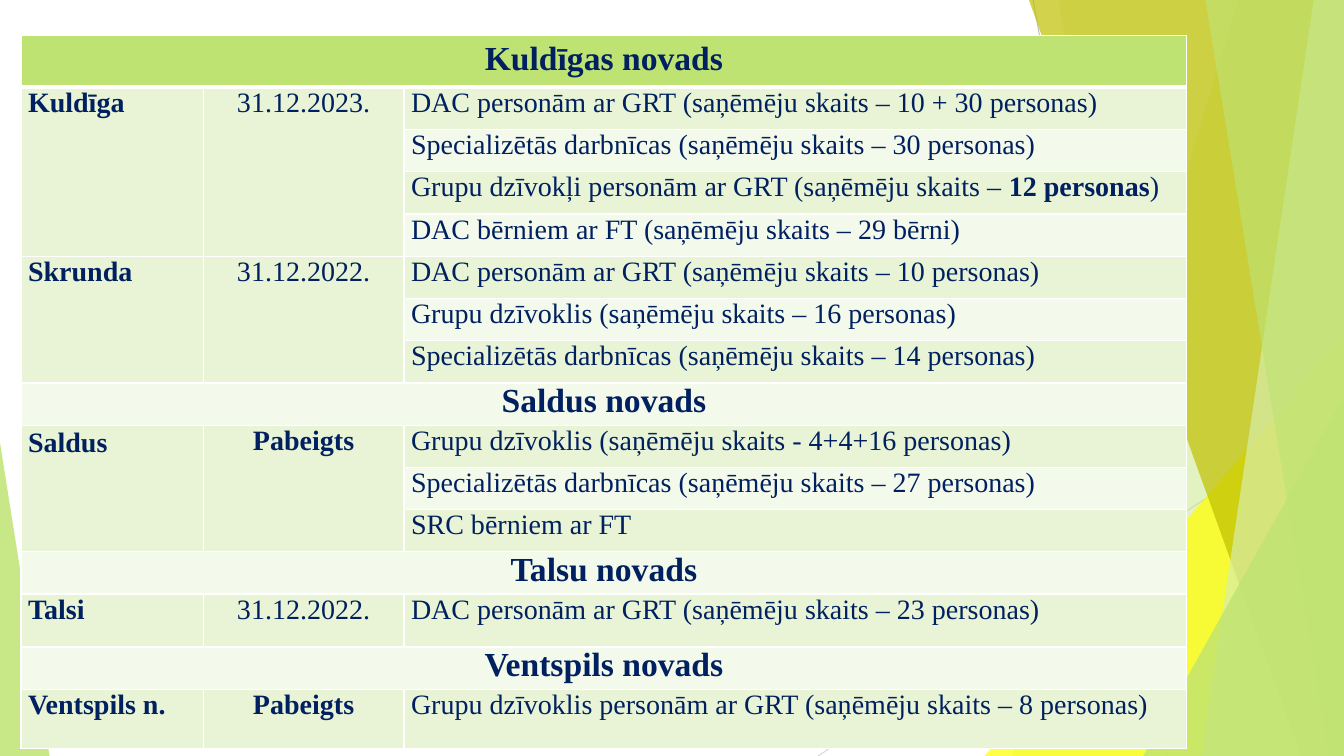
from dataclasses import dataclass
from itertools import accumulate

from lxml.etree import SubElement
from pptx import Presentation
from pptx.dml.color import RGBColor
from pptx.enum.shapes import MSO_CONNECTOR as Connector, MSO_SHAPE as Shape
from pptx.enum.text import PP_ALIGN as Align
from pptx.oxml.ns import qn
from pptx.util import Inches, Pt

COLUMNS, ROWS = 160, 90
UNIT = Inches(7.5) / ROWS


@dataclass(frozen=True)
class Theme:
    font: str = "Times New Roman"
    title_size: int = 24
    body_size: int = 20
    ink: str = "002060"
    rule: str = "FFFFFF"
    lime: str = "BFE373"
    pale_lime: str = "D8EEAA"
    olive: str = "BFBF00"
    yellow: str = "FFFF00"
    bands: tuple = ("F4FAEB", "E8F4D5")
    steep_line: str = "BFBF BF".replace(" ", "")
    shallow_line: str = "D8D8D8"


@dataclass(frozen=True)
class Place:
    name: str
    deadline: str
    services: tuple
    finished: bool = False
    line_spacing: float = 1.0


THEME = Theme()
COLUMN_WIDTHS = (21.7, 23.9, 93.2)
ROW_HEIGHT = 5.03
TALL_ROWS = {0: 6.2, 13: 6.3, 15: 7.1}

DISTRICTS = (
    ("Kuldīgas novads", (
        Place("Kuldīga", "31.12.2023.", (
            "DAC personām ar GRT (saņēmēju skaits – 10 + 30 personas)",
            "Specializētās darbnīcas (saņēmēju skaits – 30 personas)",
            "Grupu dzīvokļi personām ar GRT (saņēmēju skaits – *12 personas*)",
            "DAC bērniem ar FT (saņēmēju skaits – 29 bērni)")),
        Place("Skrunda", "31.12.2022.", (
            "DAC personām ar GRT (saņēmēju skaits – 10 personas)",
            "Grupu dzīvoklis (saņēmēju skaits – 16 personas)",
            "Specializētās darbnīcas (saņēmēju skaits – 14 personas)")))),
    ("Saldus novads", (
        Place("Saldus", "Pabeigts", (
            "Grupu dzīvoklis (saņēmēju skaits - 4+4+16 personas)",
            "Specializētās darbnīcas (saņēmēju skaits – 27 personas)",
            "SRC bērniem ar FT"), finished=True, line_spacing=1.07),)),
    ("Talsu novads", (
        Place("Talsi", "31.12.2022.", (
            "DAC personām ar GRT (saņēmēju skaits – 23 personas)",)),)),
    ("Ventspils novads", (
        Place("Ventspils n.", "Pabeigts", (
            "Grupu dzīvoklis personām ar GRT (saņēmēju skaits – 8 personas)",),
            finished=True),)),
)


def grid(units):
    return round(units * UNIT)


def color(code):
    return RGBColor.from_string(code)


def paint(shape, code, opacity):
    shape.shadow.inherit = False
    shape.line.fill.background()
    shape.fill.solid()
    shape.fill.fore_color.rgb = color(code)
    tint = shape.fill._xPr.find(qn("a:solidFill"))[0]
    SubElement(tint, qn("a:alpha"), val=str(opacity * 1000))


def add_ray(slide, start, end, code):
    ray = slide.shapes.add_connector(Connector.STRAIGHT, *map(grid, start + end))
    ray.line.color.rgb = color(code)
    ray.line.width = Pt(0.75)
    SubElement(ray._element.spPr, qn("a:effectLst"))


def add_facet(slide, top, bottom, code, opacity):
    outline = slide.shapes.build_freeform(grid(top), 0)
    outline.add_line_segments(
        [(grid(x), grid(y)) for x, y in ((COLUMNS, 0), (COLUMNS, ROWS), (bottom, ROWS))])
    paint(outline.convert_to_shape(), code, opacity)


def add_wedge(slide, left, top, right, apex, code, opacity):
    wedge = slide.shapes.add_shape(
        Shape.ISOSCELES_TRIANGLE, *map(grid, (left, top, right - left, ROWS - top)))
    wedge.adjustments[0] = apex
    paint(wedge, code, opacity)


def add_backdrop(slide):
    add_ray(slide, (123, 0), (139, ROWS), THEME.steep_line)
    add_ray(slide, (COLUMNS, 48.4), (97.4, ROWS), THEME.shallow_line)
    add_facet(slide, 147.4, 120.5, THEME.lime, 30)
    add_facet(slide, 126, 142, THEME.lime, 20)
    add_wedge(slide, 117.2, 40, COLUMNS, 1, THEME.yellow, 72)
    add_facet(slide, 122.5, 154.9, THEME.olive, 70)
    add_facet(slide, 156.4, 143, THEME.pale_lime, 70)
    add_facet(slide, 143.5, 158.2, THEME.lime, 65)
    add_wedge(slide, 136.1, 47.2, COLUMNS, 1, THEME.lime, 80)
    add_wedge(slide, 0, 52.7, 5.9, 0, THEME.lime, 85)


def style_cell(cell, row):
    properties = cell._tc.get_or_add_tcPr()
    for side in "LRTB":
        thick = (row, side) in ((0, "B"), (1, "T"))
        border = SubElement(properties, qn(f"a:ln{side}"), w=str(Pt(3 if thick else 1)))
        SubElement(SubElement(border, qn("a:solidFill")), qn("a:srgbClr"), val=THEME.rule)
    cell.fill.solid()
    cell.fill.fore_color.rgb = color(THEME.bands[row % 2] if row else THEME.lime)
    if row:
        cell.margin_left = cell.margin_right = Inches(0.07)
        cell.margin_top = cell.margin_bottom = 0


def write(cell, text, size=THEME.body_size, bold=False, align=Align.LEFT, spacing=1.0):
    paragraph = cell.text_frame.paragraphs[0]
    paragraph.alignment = align
    paragraph.line_spacing = spacing
    font = paragraph.font
    font.name, font.size, font.bold = THEME.font, Pt(size), bold
    font.color.rgb = color(THEME.ink)
    for index, part in enumerate(text.split("*")):
        run = paragraph.add_run()
        run.text = part
        if index % 2:
            run.font.bold = True


def fill_place(table, row, place):
    last = row + len(place.services) - 1
    for column in (0, 1):
        if last > row:
            table.cell(row, column).merge(table.cell(last, column))
    write(table.cell(row, 0), place.name, bold=True, spacing=place.line_spacing)
    write(table.cell(row, 1), place.deadline, bold=place.finished, align=Align.CENTER)
    for offset, service in enumerate(place.services):
        write(table.cell(row + offset, 2), service)


def add_schedule(slide):
    sizes = [1 + sum(len(place.services) for place in places) for _, places in DISTRICTS]
    heights = [TALL_ROWS.get(row, ROW_HEIGHT) for row in range(sum(sizes))]
    table = slide.shapes.add_table(
        len(heights), len(COLUMN_WIDTHS),
        *map(grid, (2.5, 4.2, sum(COLUMN_WIDTHS), sum(heights)))).table
    for column, width in zip(table.columns, COLUMN_WIDTHS):
        column.width = grid(width)
    for index, (row, height) in enumerate(zip(table.rows, heights)):
        row.height = grid(height)
        for cell in row.cells:
            style_cell(cell, index)
    for start, (district, places) in zip(accumulate(sizes, initial=0), DISTRICTS):
        title = table.cell(start, 0)
        title.merge(table.cell(start, 2))
        write(title, district, THEME.title_size, True, Align.CENTER)
        row = start + 1
        for place in places:
            fill_place(table, row, place)
            row += len(place.services)


def main():
    presentation = Presentation()
    presentation.slide_width, presentation.slide_height = grid(COLUMNS), grid(ROWS)
    slide = presentation.slides.add_slide(presentation.slide_layouts[6])
    add_backdrop(slide)
    add_schedule(slide)
    presentation.save("out.pptx")


if __name__ == "__main__":
    main()
